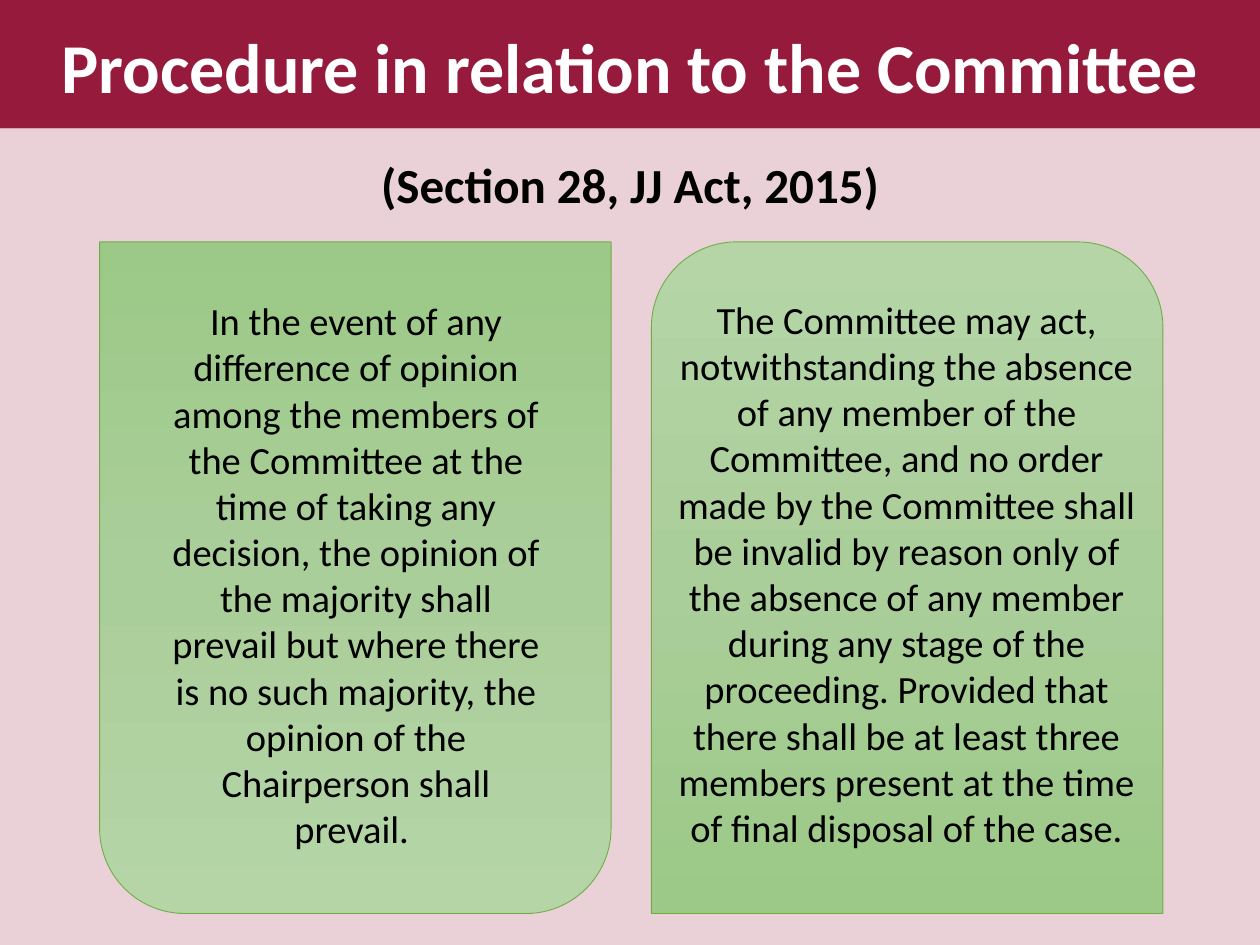
"""Build a slide on the procedure in relation to the Committee."""
import copy
from dataclasses import dataclass

import pptx
import pptx.dml.color
import pptx.enum.shapes
import pptx.enum.text
import pptx.oxml.ns
import pptx.util
from pptx.util import Inches


@dataclass(frozen=True)
class Theme:
    font: str = "Calibri"
    band: str = "951A3B"
    light: str = "FFFFFF"
    dark: str = "000000"
    edge: str = "70AD47"
    panel: tuple = ("B5D5A7", "AACE9A", "9CC987")
    title: int = 40
    subtitle: int = 28
    body: int = 22


def rgb(value):
    return pptx.dml.color.RGBColor.from_string(value)


class SlideBuilder:
    def __init__(self, prs, theme):
        self.theme = theme
        self.slide = prs.slides.add_slide(prs.slide_layouts[6])

    def shape(self, kind, box):
        sp = self.slide.shapes.add_shape(kind, *map(Inches, box))
        sp.shadow.inherit = False
        return sp

    def band(self, box, opacity=100):
        sp = self.shape(pptx.enum.shapes.MSO_SHAPE.RECTANGLE, box)
        sp.fill.solid()
        sp.fill.fore_color.rgb = rgb(self.theme.band)
        sp.line.fill.background()
        if opacity < 100:
            color = sp.fill._xPr.find(".//" + pptx.oxml.ns.qn("a:srgbClr"))
            alpha = color.makeelement(pptx.oxml.ns.qn("a:alpha"), {"val": str(opacity * 1000)})
            color.append(alpha)

    def panel(self, box, rotation=0):
        sp = self.shape(pptx.enum.shapes.MSO_SHAPE.ROUND_2_SAME_RECTANGLE, box)
        sp.rotation = rotation
        sp.fill.gradient()
        sp.fill.gradient_angle = 270
        stops = sp._element.spPr.find(".//" + pptx.oxml.ns.qn("a:gsLst"))
        stops.insert(1, copy.deepcopy(stops[0]))
        for i, (stop, color) in enumerate(zip(sp.fill.gradient_stops, self.theme.panel)):
            stop.position = i / 2
            stop.color.rgb = rgb(color)
        sp.line.color.rgb = rgb(self.theme.edge)
        sp.line.width = pptx.util.Pt(0.5)

    def text(self, box, text, size, color, bold=False, space_after=0):
        tf = self.slide.shapes.add_textbox(*map(Inches, box)).text_frame
        tf.word_wrap = True
        tf.text = text
        p = tf.paragraphs[0]
        p.alignment = pptx.enum.text.PP_ALIGN.CENTER
        p.space_after = pptx.util.Pt(space_after)
        font = p.runs[0].font
        font.name = self.theme.font
        font.size = pptx.util.Pt(size)
        font.bold = bold
        font.color.rgb = rgb(color)


def main():
    prs = pptx.Presentation()
    prs.slide_width, prs.slide_height = Inches(10), Inches(7.5)
    theme = Theme()
    s = SlideBuilder(prs, theme)

    s.band((0, 0, 10, 1.02))
    s.band((0, 1.02, 10, 6.48), opacity=20)
    s.text((0, 0.14, 10, 0.67), "Procedure in relation to the Committee",
           theme.title, theme.light, bold=True)
    s.text((0, 1.18, 10, 0.57), "(Section 28, JJ Act, 2015)",
           theme.subtitle, theme.dark, bold=True)

    columns = [
        (0.79, 180, (1.22, 2.31, 3.21, 4.54),
         "In the event of any difference of opinion among the members of the "
         "Committee at the time of taking any decision, the opinion of the majority "
         "shall prevail but where there is no such majority, the opinion of the "
         "Chairperson shall prevail.\u00a0"),
        (5.17, 0, (5.27, 2.3, 3.85, 4.57),
         "The Committee may act, notwithstanding the absence of any member of the "
         "Committee, and no order made by the Committee shall be invalid by reason "
         "only of the absence of any member during any stage of the proceeding. "
         "Provided that there shall be at least three members present at the time "
         "of final disposal of the case."),
    ]
    for left, rotation, text_box, text in columns:
        s.panel((left, 1.92, 4.06, 5.33), rotation)
        s.text(text_box, text, theme.body, theme.dark, space_after=12)

    prs.save("out.pptx")


if __name__ == "__main__":
    main()
